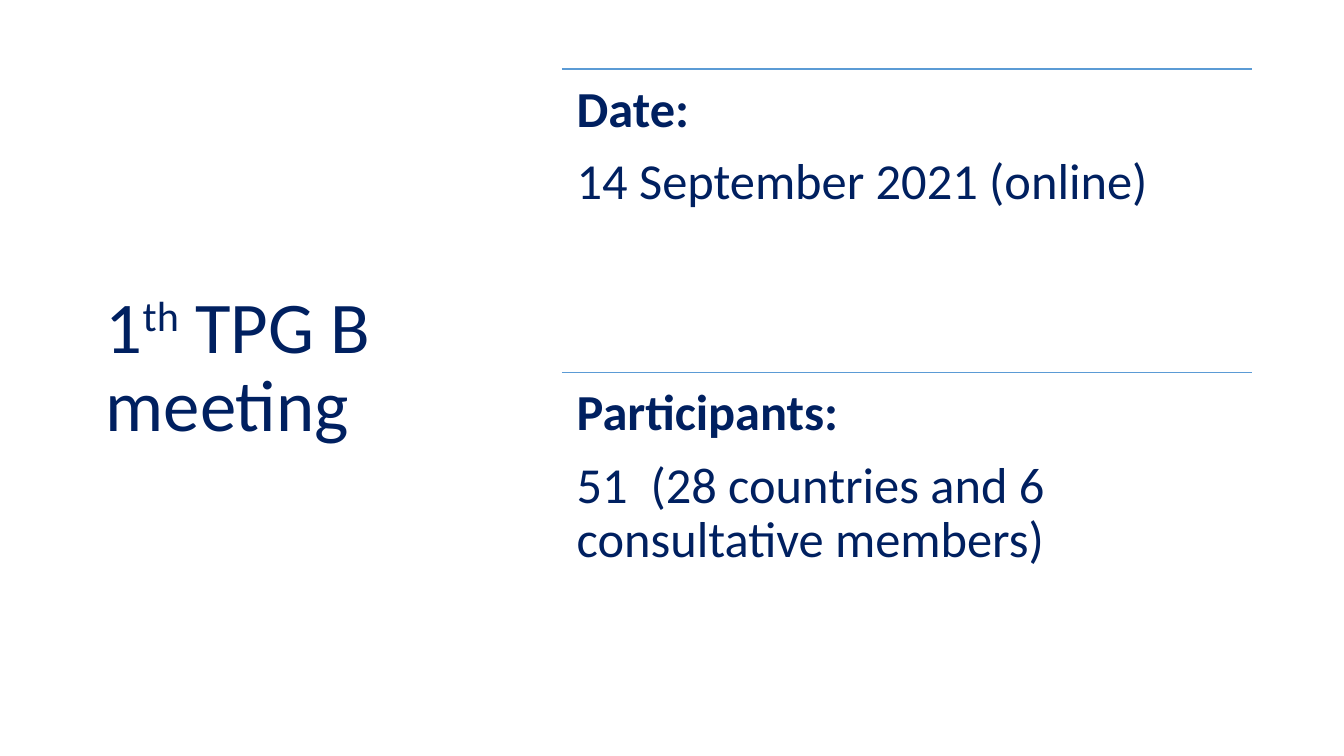
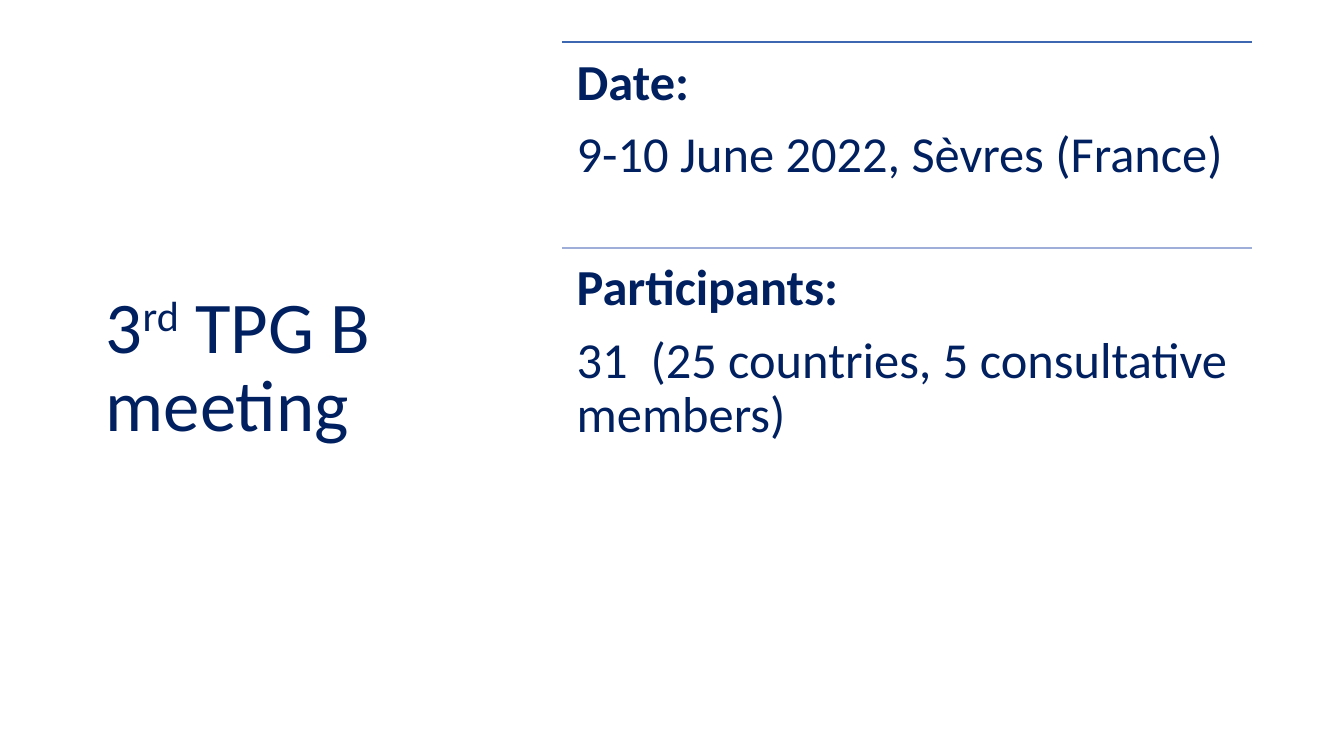
from dataclasses import dataclass

from pptx import Presentation
from pptx.dml.color import RGBColor
from pptx.enum.shapes import MSO_CONNECTOR as Connector
from pptx.enum.text import MSO_ANCHOR as Anchor
from pptx.oxml.ns import qn
from pptx.slide import Slide
from pptx.text.text import TextFrame, _Paragraph as Paragraph
from pptx.util import Cm, Pt


@dataclass(frozen=True)
class Theme:
    font: str = "Calibri"
    text: RGBColor = RGBColor(0x00, 0x20, 0x60)
    background: RGBColor = RGBColor(0xFF, 0xFF, 0xFF)
    sky: RGBColor = RGBColor(0x5B, 0x9B, 0xD5)
    blue: RGBColor = RGBColor(0x3E, 0x67, 0xB2)
    lavender: RGBColor = RGBColor(0x9F, 0xAE, 0xD8)
    title_size: Pt = Pt(39)
    body_size: Pt = Pt(27)
    title_space: Pt = Pt(6)
    body_space: Pt = Pt(9.5)
    line_spacing: float = 0.9
    rule_width: Pt = Pt(1)


@dataclass(frozen=True)
class Section:
    heading: str
    detail: str
    height: Cm
    rule_color: RGBColor


@dataclass(frozen=True)
class Meeting:
    number: str
    ordinal: str
    top: Cm
    sections: tuple[Section, ...]


THEME = Theme()
TITLE_BOX = (Cm(1.75), Cm(1.17), Cm(7.04), Cm(11.61))
SECTION_LEFT, SECTION_WIDTH = Cm(10.62), Cm(13.05)
SECTION_INSET = Cm(0.28)

MEETINGS = (
    Meeting("1", "th", Cm(1.3), (
        Section("Date:", "14 September 2021 (online)", Cm(5.74), THEME.sky),
        Section("Participants:", "51  (28 countries and 6 consultative members)",
                Cm(5.74), THEME.sky),
    )),
    Meeting("3", "rd", Cm(0.79), (
        Section("Date:", "9-10 June 2022, Sèvres (France)", Cm(3.89), THEME.blue),
        Section("Participants:", "31  (25 countries, 5 consultative members)",
                Cm(8.08), THEME.lavender),
    )),
)


def add_text_frame(slide: Slide, left: int, top: int, width: int, height: int) -> TextFrame:
    text_frame = slide.shapes.add_textbox(left, top, width, height).text_frame
    text_frame.word_wrap = True
    return text_frame


def format_paragraph(paragraph: Paragraph, size: Pt, space: Pt, bold: bool = False) -> None:
    paragraph.line_spacing = THEME.line_spacing
    paragraph.space_after = space
    for run in paragraph.runs:
        run.font.name = THEME.font
        run.font.size = size
        run.font.bold = bold
        run.font.color.rgb = THEME.text


def add_title(slide: Slide, meeting: Meeting) -> None:
    text_frame = add_text_frame(slide, *TITLE_BOX)
    text_frame.vertical_anchor = Anchor.MIDDLE
    paragraph = text_frame.paragraphs[0]
    for text in (meeting.number, meeting.ordinal, " TPG B meeting"):
        paragraph.add_run().text = text
    format_paragraph(paragraph, THEME.title_size, THEME.title_space)
    # Raise the ordinal suffix
    paragraph.runs[1].font._element.set("baseline", "30000")


def add_rule(slide: Slide, top: int, color: RGBColor) -> None:
    rule = slide.shapes.add_connector(
        Connector.STRAIGHT, SECTION_LEFT, top, SECTION_LEFT + SECTION_WIDTH, top)
    rule.line.color.rgb = color
    rule.line.width = THEME.rule_width
    properties = rule._element.spPr
    properties.append(properties.makeelement(qn("a:effectLst"), {}))


def add_section(slide: Slide, section: Section, top: int) -> None:
    add_rule(slide, top, section.rule_color)
    text_frame = add_text_frame(slide, SECTION_LEFT, top, SECTION_WIDTH, section.height)
    text_frame.margin_left = text_frame.margin_right = SECTION_INSET
    text_frame.margin_top = text_frame.margin_bottom = SECTION_INSET
    text_frame.text = f"{section.heading}\n{section.detail}"
    heading, detail = text_frame.paragraphs
    format_paragraph(heading, THEME.body_size, THEME.body_space, bold=True)
    format_paragraph(detail, THEME.body_size, THEME.body_space)


def add_meeting(presentation: Presentation, meeting: Meeting) -> None:
    slide = presentation.slides.add_slide(presentation.slide_layouts[6])
    slide.background.fill.solid()
    slide.background.fill.fore_color.rgb = THEME.background
    add_title(slide, meeting)
    # Sections stack directly below one another
    top = meeting.top
    for section in meeting.sections:
        add_section(slide, section, top)
        top += section.height


def main() -> None:
    presentation = Presentation()
    presentation.slide_width, presentation.slide_height = Cm(25.4), Cm(14.29)
    for meeting in MEETINGS:
        add_meeting(presentation, meeting)
    presentation.save("out.pptx")


if __name__ == "__main__":
    main()
